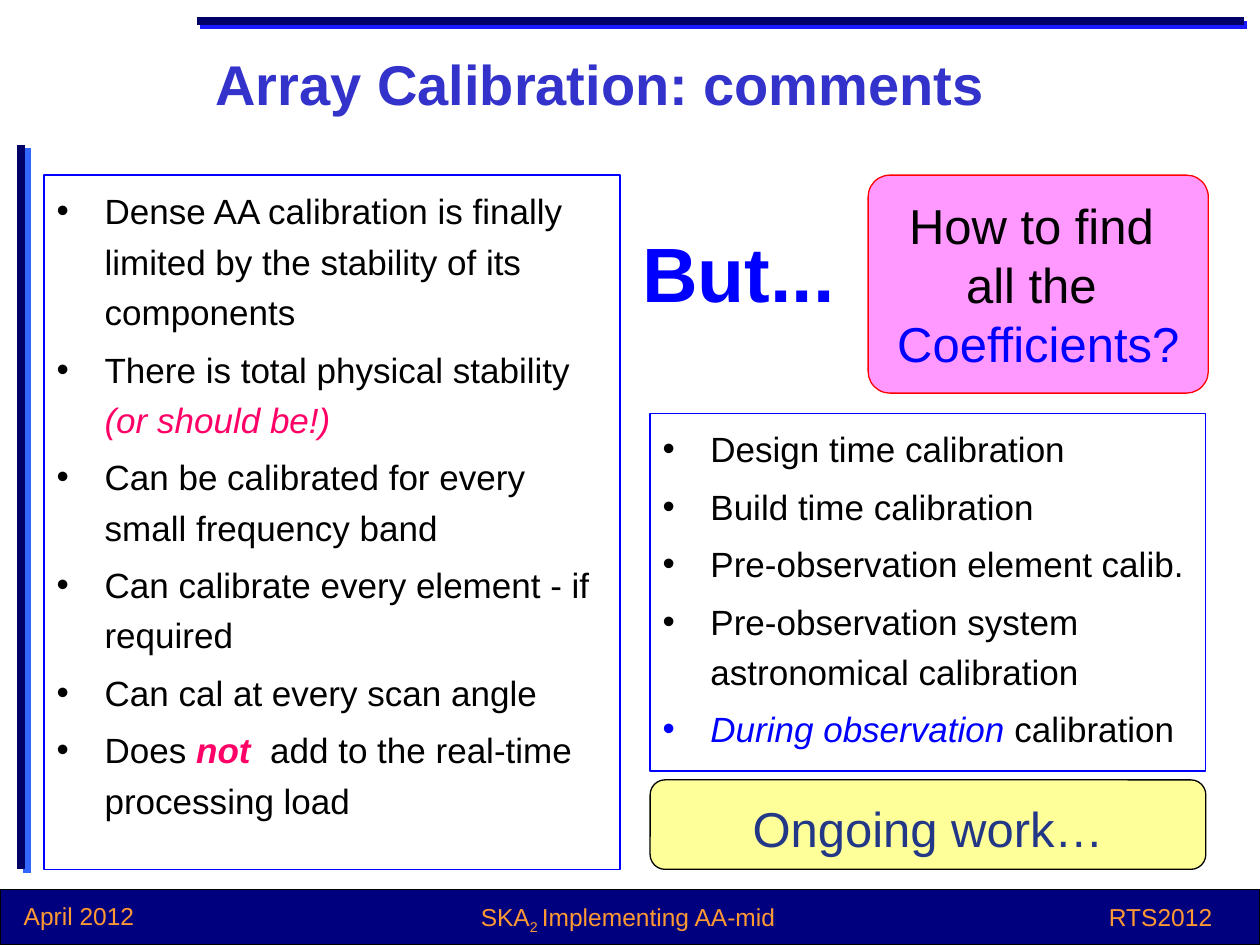
from dataclasses import dataclass

from lxml import etree
from pptx import Presentation
from pptx.dml.color import RGBColor
from pptx.enum.shapes import MSO_CONNECTOR, MSO_SHAPE
from pptx.enum.text import MSO_ANCHOR, MSO_AUTO_SIZE, PP_ALIGN
from pptx.oxml.ns import qn
from pptx.util import Inches, Pt

RECT, ROUND = MSO_SHAPE.RECTANGLE, MSO_SHAPE.ROUNDED_RECTANGLE
LEFT, MID, RIGHT = PP_ALIGN.LEFT, PP_ALIGN.CENTER, PP_ALIGN.RIGHT
TOP, CENTRE = MSO_ANCHOR.TOP, MSO_ANCHOR.MIDDLE
STRAIGHT = MSO_CONNECTOR.STRAIGHT
NO_FIT = MSO_AUTO_SIZE.NONE


@dataclass(frozen=True)
class Theme:
    face: str = "Arial"
    ink: str = "000000"
    blue: str = "0000FF"
    pink: str = "FF0066"
    title: str = "3333CC"
    navy: str = "00007E"
    rule: str = "000066"
    orange: str = "FF9933"
    rose: str = "FF99FF"
    red: str = "FF0000"
    lemon: str = "FFFF99"
    slate: str = "233787"
    small: int = 14
    text: int = 20
    large: int = 28
    head: int = 32
    huge: int = 44


@dataclass(frozen=True)
class Box:
    x: int
    y: int
    w: int
    h: int

    def inner(self, x, y, w, h):
        """Return an inner box given as percent of this one."""
        return Box(int(self.x + self.w * x / 100), int(self.y + self.h * y / 100),
                   int(self.w * w / 100), int(self.h * h / 100))

    def place(self, shape):
        shape.left, shape.top, shape.width, shape.height = self.x, self.y, self.w, self.h


T = Theme()

STABLE = [
    [("Dense AA calibration is finally limited by the stability of its components", {})],
    [("There is total physical stability ", {}),
     ("(or should be!)", {"color": T.pink, "italic": True})],
    [("Can be calibrated for every small frequency band", {})],
    [("Can calibrate every element - if required", {})],
    [("Can cal at every scan angle", {})],
    [("Does ", {}), ("not ", {"color": T.pink, "bold": True, "italic": True}),
     (" add to the real-time processing load", {})],
]
STAGES = [
    [("Design time calibration", {})],
    [("Build time calibration", {})],
    [("Pre-observation element calib.", {})],
    [("Pre-observation system astronomical calibration", {})],
    [("During observation", {"color": T.blue, "italic": True}), (" calibration", {})],
]


def style(run, size, color=T.ink, bold=False, italic=False):
    font = run.font
    font.name, font.size, font.bold, font.italic = T.face, Pt(size), bold, italic
    font.color.rgb = RGBColor.from_string(color)


def write(frame, lines, size, color=T.ink, align=LEFT, anchor=TOP, wrap=True, bold=False):
    """Fill a frame with plain lines in one style."""
    frame.text = "\n".join(lines)
    frame.word_wrap, frame.vertical_anchor = wrap, anchor
    for para in frame.paragraphs:
        para.alignment = align
        for run in para.runs:
            style(run, size, color, bold)


def edge(shape, line, fill=None):
    """Set outline and fill, without shadow."""
    shape.shadow.inherit = False
    shape.line.color.rgb = RGBColor.from_string(line)
    shape.line.width = Pt(0.75)
    if fill:
        shape.fill.solid()
        shape.fill.fore_color.rgb = RGBColor.from_string(fill)
    else:
        shape.fill.background()


def panel(slide, box, kind, line, fill=None):
    shape = slide.shapes.add_shape(kind, box.x, box.y, box.w, box.h)
    edge(shape, line, fill)
    return shape


def label(slide, box, text, size, color, **look):
    frame = slide.shapes.add_textbox(box.x, box.y, box.w, box.h).text_frame
    write(frame, [text], size, color, **look)
    return frame


def bullets(shape, items):
    edge(shape, T.blue)
    frame = shape.text_frame
    frame.word_wrap, frame.vertical_anchor, frame.auto_size = True, TOP, NO_FIT
    for i, item in enumerate(items):
        para = frame.add_paragraph() if i else frame.paragraphs[0]
        props = para._p.get_or_add_pPr()
        props.set("marL", str(Inches(0.38)))
        props.set("indent", str(-Inches(0.38)))
        etree.SubElement(props, qn("a:buFont")).set("typeface", T.face)
        etree.SubElement(props, qn("a:buChar")).set("char", "•")
        para.alignment, para.line_spacing = LEFT, 1.2
        para.space_before = Pt(T.text * 0.2 if i else 0)
        for text, look in item:
            run = para.add_run()
            run.text = text
            style(run, T.text, **look)


def bar(slide, box, glow, dist, angle):
    """Draw a thick rule with a hard offset shadow."""
    line = slide.shapes.add_connector(STRAIGHT, box.x, box.y, box.x + box.w, box.y + box.h)
    line.line.color.rgb = RGBColor.from_string(T.rule)
    line.line.width = Pt(4.5)
    effects = etree.SubElement(line._element.spPr, qn("a:effectLst"))
    shade = etree.SubElement(effects, qn("a:outerShdw"), blurRad="0", dist=str(Pt(dist)),
                             dir=str(angle * 60000), algn="ctr", rotWithShape="0")
    etree.SubElement(shade, qn("a:srgbClr")).set("val", glow)


def footer(slide, box):
    panel(slide, box, RECT, T.ink, T.navy)
    label(slide, box.inner(66.8, 11.36, 30.4, 81.82), "RTS2012", T.small, T.orange, align=RIGHT)
    label(slide, box.inner(0.9, 9.09, 30.4, 81.82), "April 2012", T.small, T.orange)
    frame = label(slide, box.inner(30.2, 11.36, 39.3, 81.82), "SKA", T.small, T.orange, align=MID)
    para = frame.paragraphs[0]
    for text, base in (("2 ", -25000), ("Implementing AA-mid", 0)):
        run = para.add_run()
        run.text = text
        style(run, T.small, T.orange)
        run._r.get_or_add_rPr().set("baseline", str(base))


def heading(slide, box):
    title = slide.shapes.title
    box.place(title)
    write(title.text_frame, ["Array Calibration: comments"], T.head, T.title,
          anchor=CENTRE, bold=True)
    title.text_frame.auto_size = NO_FIT


def notes(slide, box):
    """Place the left list of comments."""
    body = slide.placeholders[1]
    box.place(body)
    bullets(body, STABLE)


def work(slide, box):
    """Place the right side: question, stages and status."""
    bullets(panel(slide, box.inner(3.49, 34.3, 96.08, 51.54), RECT, T.blue), STAGES)
    ask = panel(slide, box.inner(41.18, 0, 58.82, 31.4), ROUND, T.red, T.rose)
    ask.adjustments[0] = 0.1
    write(ask.text_frame, ["How to find ", "all the ", "Coefficients?"], T.large,
          align=MID, anchor=CENTRE, wrap=False)
    style(ask.text_frame.paragraphs[2].runs[0], T.large, T.blue)
    label(slide, box.inner(0, 6.35, 37.69, 15.06), "But...", T.huge, T.blue,
          wrap=False, bold=True)
    status = panel(slide, box.inner(3.49, 87.11, 96.08, 12.89), ROUND, T.ink, T.lemon)
    write(status.text_frame, ["Ongoing work…"], T.large, T.slate,
          align=MID, anchor=CENTRE, wrap=False)
    status.text_frame.paragraphs[0].line_spacing = 1.1


def main():
    deck = Presentation()
    deck.slide_width, deck.slide_height = Inches(10), Inches(7.5)
    page = Box(0, 0, deck.slide_width, deck.slide_height)
    slide = deck.slides.add_slide(deck.slide_layouts[1])
    footer(slide, page.inner(0, 94.13, 100, 5.87))
    bar(slide, page.inner(1.7, 15.33, 0, 76.67), "3366FF", 3.6, 34)
    bar(slide, page.inner(15.6, 2.27, 83.1, 0), "1819FF", 2.8, 45)
    heading(slide, page.inner(16.1, 2.93, 67.7, 11.73))
    notes(slide, page.inner(3.5, 18.53, 45.7, 73.47))
    work(slide, page.inner(50, 18.53, 45.9, 73.47))
    deck.save("out.pptx")


if __name__ == "__main__":
    main()
